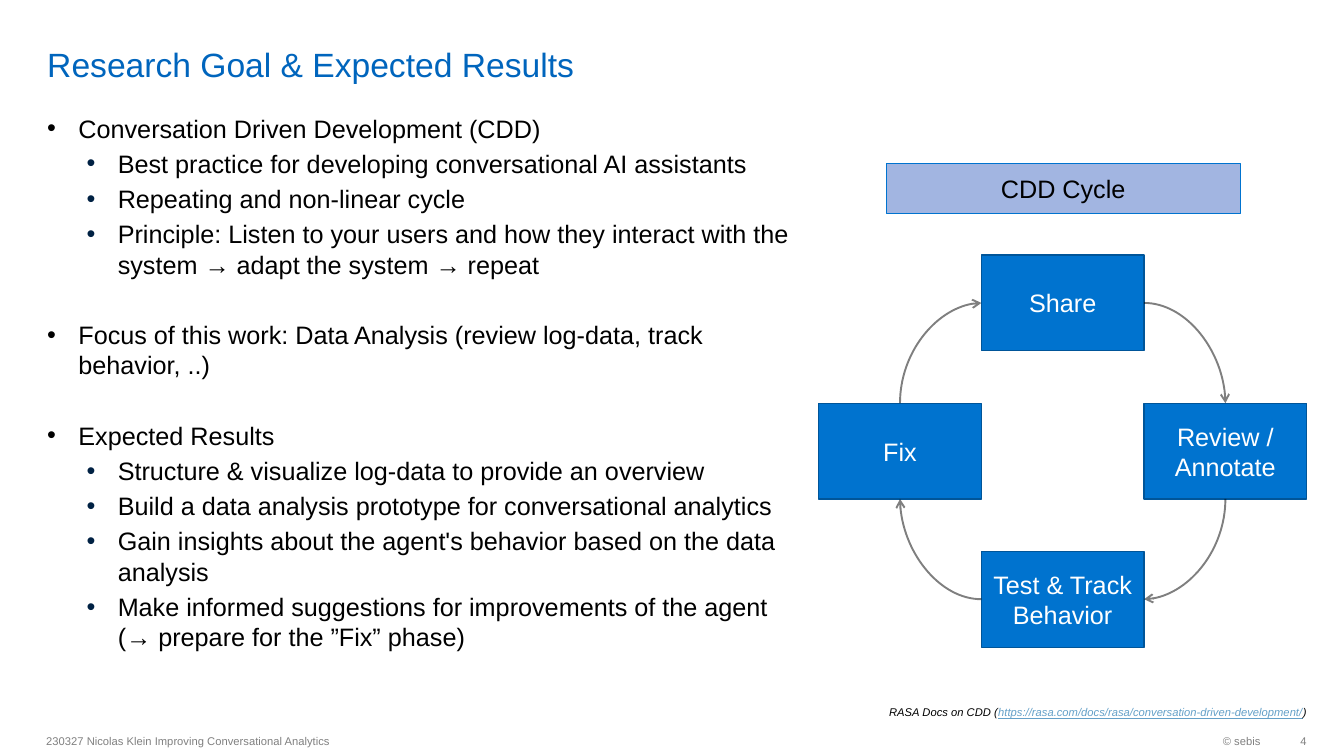
from lxml import etree
from pptx import Presentation
from pptx.dml.color import RGBColor
from pptx.enum.shapes import MSO_CONNECTOR, MSO_SHAPE
from pptx.enum.text import MSO_ANCHOR, PP_ALIGN
from pptx.oxml.ns import qn
from pptx.util import Inches, Pt

RECTANGLE = MSO_SHAPE.RECTANGLE
CURVE = MSO_CONNECTOR.CURVE
TOP, MIDDLE, BOTTOM = MSO_ANCHOR.TOP, MSO_ANCHOR.MIDDLE, MSO_ANCHOR.BOTTOM
LEFT, CENTER, RIGHT = PP_ALIGN.LEFT, PP_ALIGN.CENTER, PP_ALIGN.RIGHT
SITE_TOP, SITE_LEFT, SITE_BOTTOM, SITE_RIGHT = range(4)

BLACK = RGBColor(0x00, 0x00, 0x00)
WHITE = RGBColor(0xFF, 0xFF, 0xFF)
GRAY = RGBColor(0x80, 0x80, 0x80)
TITLE_BLUE = RGBColor(0x00, 0x65, 0xBD)
STEP_BLUE = RGBColor(0x00, 0x73, 0xCF)
STEP_EDGE = RGBColor(0x00, 0x55, 0x99)
HEADING_FILL = RGBColor(0xA2, 0xB5, 0xE1)
LINK_BLUE = RGBColor(0x64, 0xA0, 0xC8)
BULLET_NAVY = "002143"

LINE_GAP, SECTION_GAP = Pt(3.6), Pt(28.7)
GOALS = [
    ("Conversation Driven Development (CDD)", [
        "Best practice for developing conversational AI assistants",
        "Repeating and non-linear cycle",
        "Principle: Listen to your users and how they interact with the system "
        "→ adapt the system → repeat",
    ]),
    ("Focus of this work: Data Analysis (review log-data, track behavior, ..)", []),
    ("Expected Results", [
        "Structure & visualize log-data to provide an overview",
        "Build a data analysis prototype for conversational analytics",
        "Gain insights about the agent's behavior based on the data analysis",
        "Make informed suggestions for improvements of the agent\v"
        "(→ prepare for the ”Fix” phase)",
    ]),
]
SOURCE = [
    ("RASA Docs on CDD (", BLACK, False),
    ("https://rasa.com/docs/rasa/conversation-driven-development/", LINK_BLUE, True),
    (")", BLACK, False),
]


def style(font, size, color):
    font.name = "Arial"
    font.size = Pt(size)
    font.color.rgb = color


def add_text(page, box, text, size, color, align=LEFT, anchor=MIDDLE):
    label = page.shapes.add_textbox(*map(Inches, box))
    frame = label.text_frame
    frame.word_wrap = True
    frame.vertical_anchor = anchor
    frame.text = text
    para = frame.paragraphs[0]
    para.alignment = align
    style(para.font, size, color)
    return frame


def add_block(page, box, text, fill, edge, edge_width, color):
    block = page.shapes.add_shape(RECTANGLE, *map(Inches, box))
    block.shadow.inherit = False
    block.fill.solid()
    block.fill.fore_color.rgb = fill
    block.line.color.rgb = edge
    block.line.width = Pt(edge_width)
    frame = block.text_frame
    frame.word_wrap = True
    frame.vertical_anchor = MIDDLE
    frame.text = text
    frame.paragraphs[0].alignment = CENTER
    style(frame.paragraphs[0].font, 18, color)
    return block


def add_bullet(para, level):
    props = para._p.get_or_add_pPr()
    props.set("marL", str(Inches((0.31, 0.7)[level])))
    props.set("indent", str(Inches(-0.31)))
    if level:
        tint = etree.SubElement(props, qn("a:buClr"))
        etree.SubElement(tint, qn("a:srgbClr"), val=BULLET_NAVY)
    etree.SubElement(props, qn("a:buFont"), typeface="Arial")
    etree.SubElement(props, qn("a:buChar"), char="•")
    para.level = level


def add_goals(page, box):
    frame = add_text(page, box, "", 18, BLACK, anchor=TOP)
    rows = []
    for goal, details in GOALS:
        rows.append((goal, 0, SECTION_GAP))
        rows += [(detail, 1, LINE_GAP) for detail in details]
    for index, (text, level, gap) in enumerate(rows):
        para = frame.add_paragraph() if index else frame.paragraphs[0]
        para.text = text
        add_bullet(para, level)
        if index:
            para.space_before = gap
        style(para.font, 18, BLACK)


def add_arc(page, start, start_site, end, end_site, arrow_end):
    arc = page.shapes.add_connector(CURVE, 0, 0, 0, 0)
    arc.begin_connect(start, start_site)
    arc.end_connect(end, end_site)
    arc.line.color.rgb = BLACK
    arc.line.width = Pt(1.35)
    props = arc._element.spPr
    props.find(qn("a:prstGeom")).set("prst", "curvedConnector2")
    line = props.find(qn("a:ln"))
    etree.SubElement(line.find(".//" + qn("a:srgbClr")), qn("a:alpha"), val="50000")
    etree.SubElement(line, qn(arrow_end), type="arrow")
    etree.SubElement(props, qn("a:effectLst"))


def add_cycle(page, box):
    left, top, width, height = box
    add_block(page, (left + 0.67, top, 3.51, 0.5), "CDD Cycle",
              HEADING_FILL, STEP_BLUE, 0.75, BLACK)
    step_width, step_height = width / 3, 0.95
    first_row = top + 0.91
    row_pitch = (top + height - step_height - first_row) / 2

    def add_step(text, column, row):
        place = (left + column * step_width, first_row + row * row_pitch,
                 step_width, step_height)
        return add_block(page, place, text, STEP_BLUE, STEP_EDGE, 0.85, WHITE)

    share = add_step("Share", 1, 0)
    review = add_step("Review / Annotate", 2, 1)
    test = add_step("Test & Track Behavior", 1, 2)
    fix = add_step("Fix", 0, 1)
    add_arc(page, share, SITE_RIGHT, review, SITE_TOP, "a:tailEnd")
    add_arc(page, test, SITE_RIGHT, review, SITE_BOTTOM, "a:headEnd")
    add_arc(page, test, SITE_LEFT, fix, SITE_BOTTOM, "a:tailEnd")
    add_arc(page, share, SITE_LEFT, fix, SITE_TOP, "a:headEnd")


def add_source(page, box):
    frame = add_text(page, box, "", 8, BLACK, RIGHT, TOP)
    frame.margin_right = 0
    for text, color, underlined in SOURCE:
        span = frame.paragraphs[0].add_run()
        span.text = text
        style(span.font, 8, color)
        span.font.italic = True
        span.font.underline = underlined


def add_footer(page, box):
    left, top, width, height = box
    right = left + width
    add_text(page, (left, top, 6.3, height),
             "230327 Nicolas Klein Improving Conversational Analytics", 8, GRAY)
    add_text(page, (right - 2.7, top, 2.34, height), "© sebis", 8, GRAY, RIGHT)
    number = add_text(page, (right - 0.36, top, 0.36, height), "4", 8, GRAY, RIGHT)
    number.margin_right = 0


def main():
    deck = Presentation()
    deck.slide_width, deck.slide_height = Inches(13.33), Inches(7.5)
    page = deck.slides.add_slide(deck.slide_layouts[6])
    title = add_text(page, (0.37, 0.05, 11.58, 0.79),
                     "Research Goal & Expected Results", 24, TITLE_BLUE, anchor=BOTTOM)
    title.margin_top = title.margin_bottom = 0
    add_goals(page, (0.37, 1.07, 7.76, 5.91))
    add_cycle(page, (8.12, 1.62, 4.84, 4.8))
    add_source(page, (0.36, 6.95, 12.6, 0.24))
    add_footer(page, (0.36, 7.19, 12.6, 0.32))
    deck.save("out.pptx")


if __name__ == "__main__":
    main()
